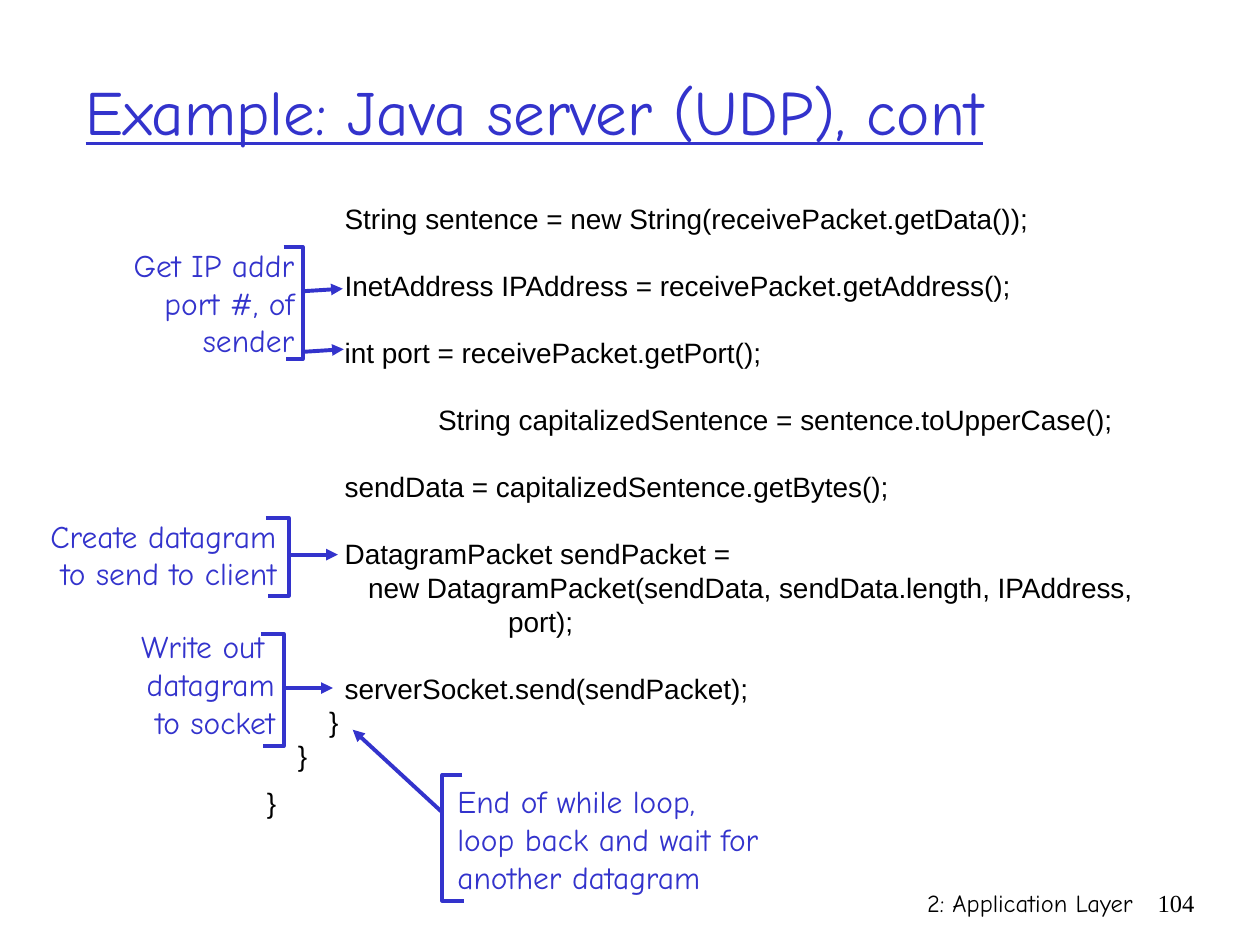
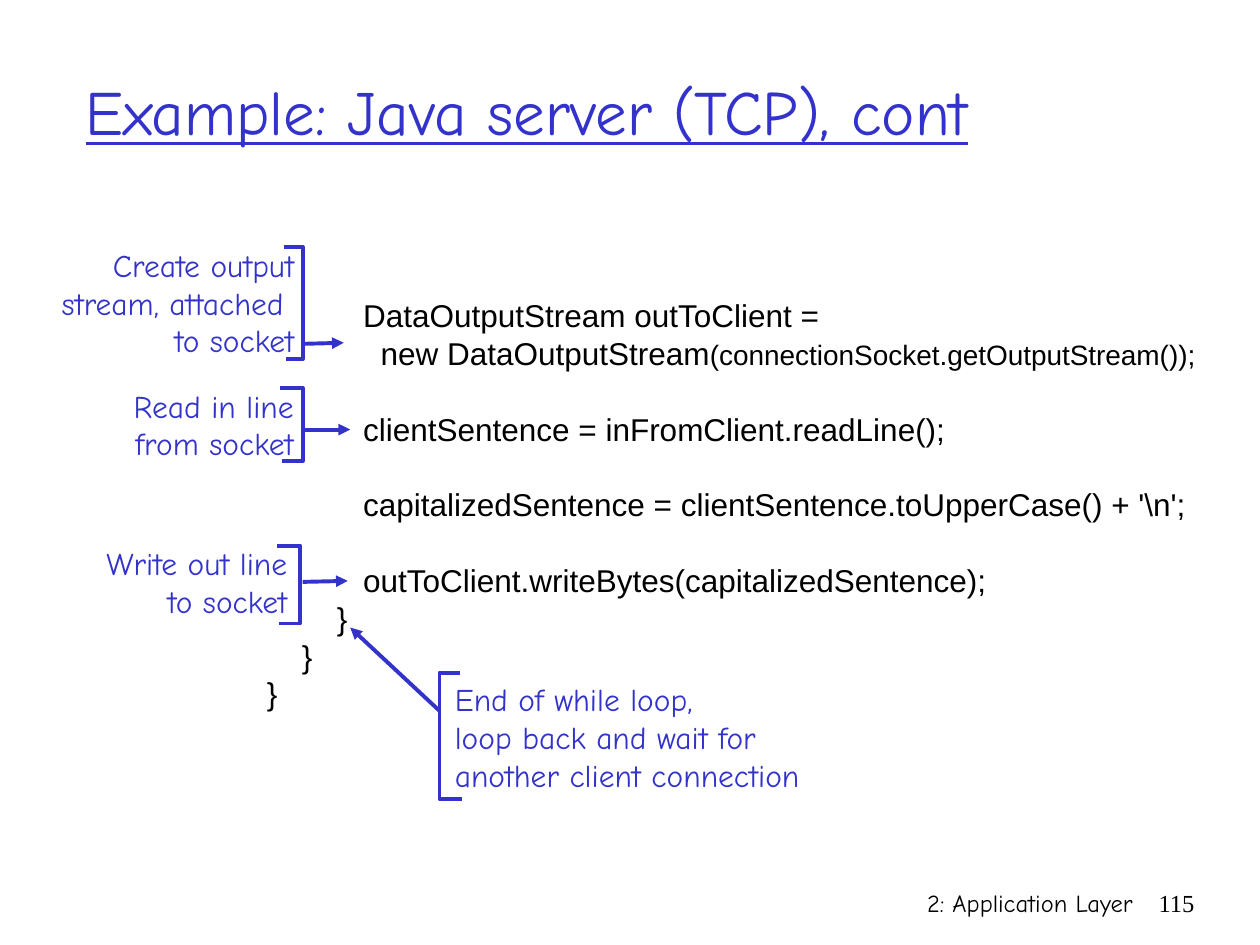
"""Builds two slides that annotate the Java UDP and TCP server listings."""
import dataclasses

import lxml.etree
import pptx
import pptx.dml.color
import pptx.enum.shapes
import pptx.enum.text
import pptx.oxml.ns
import pptx.util

Cm, Pt = pptx.util.Cm, pptx.util.Pt
ALIGN = pptx.enum.text.PP_ALIGN

BLUE, BLACK = "3333CC", "000000"
NOTE_FONT, CODE_FONT, NUMBER_FONT = "Comic Neue", "Arial", "Times New Roman"
NOTE_SIZE, FOOTER_SIZE, TITLE_SIZE = 18, 14, 36
LINE_PITCH = 1.2
SPACE_WIDTH = 0.278
STROKE = 2.25


@dataclasses.dataclass
class Callout:
    """A note with its bracket (spine, top, bottom, tip) and its arrows, in cm."""
    lines: list
    place: tuple
    bracket: tuple
    arrows: list
    align: object = ALIGN.RIGHT


UDP_CODE = [
    (10, 0, "String sentence = new String(receivePacket.getData());"),
    (10, 1, "InetAddress IPAddress = receivePacket.getAddress();"),
    (10, 1, "int port = receivePacket.getPort();"),
    (22, 1, "String capitalizedSentence = sentence.toUpperCase();"),
    (10, 1, "sendData = capitalizedSentence.getBytes();"),
    (10, 1, "DatagramPacket sendPacket ="),
    (13, 0, "new DatagramPacket(sendData, sendData.length, IPAddress,"),
    (31, 0, "port);"),
    (10, 1, "serverSocket.send(sendPacket);"),
    (8, 0, "}"),
    (4, 0, "}"),
    (0, 0.4, "}"),
]

TCP_CODE = [
    (11, 0, "DataOutputStream outToClient ="),
    (13, 0, "new DataOutputStream", "(connectionSocket.getOutputStream());"),
    (11, 1, "clientSentence = inFromClient.readLine();"),
    (11, 1, "capitalizedSentence = clientSentence.toUpperCase() + '\\n';"),
    (11, 1, "outToClient.writeBytes(capitalizedSentence);"),
    (8, 0, "}"),
    (4, 0, "}"),
    (0, 0, "}"),
]

TOP_NOTE_PLACE = (0.36, 4.83, 5.82)
TOP_BRACKET = (6.1, 4.98, 7.24, 5.72)

UDP_CALLOUTS = [
    Callout(["Get IP addr", "port #, of", "sender"], TOP_NOTE_PLACE, TOP_BRACKET,
            [(6.12, 5.87, 6.91, 5.82), (6.15, 7.09, 6.93, 7.04)]),
    Callout(["Create datagram", "to send to client"], (0.33, 10.29, 5.49),
            (5.82, 10.44, 12.01, 5.36), [(5.87, 11.18, 6.81, 11.18)]),
    Callout(["Write out ", "datagram", "to socket"], (2.13, 12.52, 3.66),
            (5.72, 12.78, 15.04, 5.26), [(5.77, 13.87, 6.71, 13.87)]),
    Callout(["End of while loop,", "loop back and wait for", "another datagram"],
            (8.97, 15.65, 7.06), (8.92, 15.62, 18.16, 9.32),
            [(8.92, 16.38, 7.11, 14.71)], ALIGN.LEFT),
]

TCP_CALLOUTS = [
    Callout(["Create output", "stream, attached ", "to socket"], TOP_NOTE_PLACE,
            TOP_BRACKET, [(6.15, 6.93, 6.93, 6.91)]),
    Callout(["Read in line", "from socket"], (2.06, 7.67, 4.11),
            (6.1, 7.82, 9.3, 5.64), [(6.15, 8.66, 7.06, 8.66)]),
    Callout(["Write out line", "to socket"], (1.37, 10.85, 4.67),
            (6.05, 11, 12.57, 5.59), [(6.1, 11.73, 7.01, 11.71)]),
    Callout(["End of while loop,", "loop back and wait for", "another client connection"],
            (8.92, 13.59, 8), (8.86, 13.56, 16.1, 9.27),
            [(8.86, 14.33, 7.06, 12.65)], ALIGN.LEFT),
]


def colour(value):
    """Turn a hex string into a colour."""
    return pptx.dml.color.RGBColor.from_string(value)


def add_span(para, text, font, size, ink):
    """Append one formatted run."""
    span = para.add_run()
    span.text = text
    span.font.name = font
    span.font.size = Pt(size)
    span.font.color.rgb = colour(ink)
    return span


def format_para(para, size, align=ALIGN.LEFT, gap=0, indent=0):
    """Set pitch, alignment, gap in lines and indent in spaces."""
    pitch = size * LINE_PITCH
    para.alignment = align
    para.line_spacing = Pt(pitch)
    para.space_before = Pt(gap * pitch)
    if indent:
        margin = Pt(indent * size * SPACE_WIDTH)
        para._p.get_or_add_pPr().set("marL", str(int(margin)))


def next_para(frame, number):
    """Give the first paragraph of a frame, then new ones."""
    return frame.add_paragraph() if number else frame.paragraphs[0]


def add_box(page, left, top, width, height):
    """Add a wrapping text box and return its frame."""
    box = page.shapes.add_textbox(Cm(left), Cm(top), Cm(width), Cm(height))
    box.text_frame.word_wrap = True
    return box.text_frame


def add_lines(page, place, lines, font, size, ink, align):
    """Add a text box of plain lines."""
    frame = add_box(page, *place)
    for number, text in enumerate(lines):
        para = next_para(frame, number)
        format_para(para, size, align)
        add_span(para, text, font, size, ink)


def add_code(page, place, rows, size):
    """Add a listing of rows: indent, gap, text and an optional smaller text."""
    frame = add_box(page, *place)
    for number, (indent, gap, text, *small) in enumerate(rows):
        para = next_para(frame, number)
        format_para(para, size, gap=gap, indent=indent)
        add_span(para, text, CODE_FONT, size, BLACK)
        for ending in small:
            add_span(para, ending, CODE_FONT, size - 2, BLACK)


def style_line(line):
    """Give a line the shared stroke."""
    line.color.rgb = colour(BLUE)
    line.width = Pt(STROKE)


def add_bracket(page, spine, top, bottom, tip):
    """Draw an open bracket whose arms run from the tip to the spine."""
    builder = page.shapes.build_freeform(Cm(tip), Cm(top))
    corners = [(spine, top), (spine, bottom), (tip + 0.04, bottom)]
    builder.add_line_segments([(Cm(x), Cm(y)) for x, y in corners], close=False)
    bracket = builder.convert_to_shape()
    bracket.fill.background()
    bracket.shadow.inherit = False
    style_line(bracket.line)


def add_arrow(page, *ends):
    """Draw an arrow between two points."""
    arrow = page.shapes.add_connector(
        pptx.enum.shapes.MSO_CONNECTOR.STRAIGHT, *[Cm(end) for end in ends])
    style_line(arrow.line)
    qn = pptx.oxml.ns.qn
    head = lxml.etree.SubElement(arrow.line._get_or_add_ln(), qn("a:tailEnd"))
    head.set("type", "triangle")
    lxml.etree.SubElement(arrow._element.spPr, qn("a:effectLst"))


def add_callout(page, callout):
    """Draw a note, its bracket and its arrows."""
    height = len(callout.lines) * 0.76 + 0.25
    add_lines(page, (*callout.place, height), callout.lines,
              NOTE_FONT, NOTE_SIZE, BLUE, callout.align)
    add_bracket(page, *callout.bracket)
    for ends in callout.arrows:
        add_arrow(page, *ends)


def add_page(deck, heading, number):
    """Add a slide with the shared title style and footer."""
    page = deck.slides.add_slide(deck.slide_layouts[5])
    title = page.shapes.title
    title.left, title.top, title.width, title.height = (
        Cm(1.47), Cm(0.64), Cm(21.59), Cm(3.18))
    frame = title.text_frame
    frame.auto_size = pptx.enum.text.MSO_AUTO_SIZE.NONE
    frame.vertical_anchor = pptx.enum.text.MSO_ANCHOR.MIDDLE
    format_para(frame.paragraphs[0], TITLE_SIZE)
    span = add_span(frame.paragraphs[0], heading, NOTE_FONT, TITLE_SIZE, BLUE)
    span.font.underline = True
    add_lines(page, (15.04, 17.78, 8.05, 1.27), ["2: Application Layer"],
              NOTE_FONT, FOOTER_SIZE, BLACK, ALIGN.RIGHT)
    add_lines(page, (22.93, 17.78, 1.4, 1.27), [number],
              NUMBER_FONT, FOOTER_SIZE, BLACK, ALIGN.RIGHT)
    return page


def main():
    """Build and save the deck."""
    deck = pptx.Presentation()
    deck.slide_width, deck.slide_height = Cm(25.4), Cm(19.05)
    slides = [
        ("Example: Java server (UDP), cont", "104", UDP_CODE, 16,
         (5.13, 3.93, 18.24, 12.8), UDP_CALLOUTS),
        ("Example: Java server (TCP), cont", "115", TCP_CODE, 18,
         (5.13, 5.85, 19.43, 9.67), TCP_CALLOUTS),
    ]
    for heading, number, rows, size, place, callouts in slides:
        page = add_page(deck, heading, number)
        add_code(page, place, rows, size)
        for callout in callouts:
            add_callout(page, callout)
    deck.save("out.pptx")


if __name__ == "__main__":
    main()
